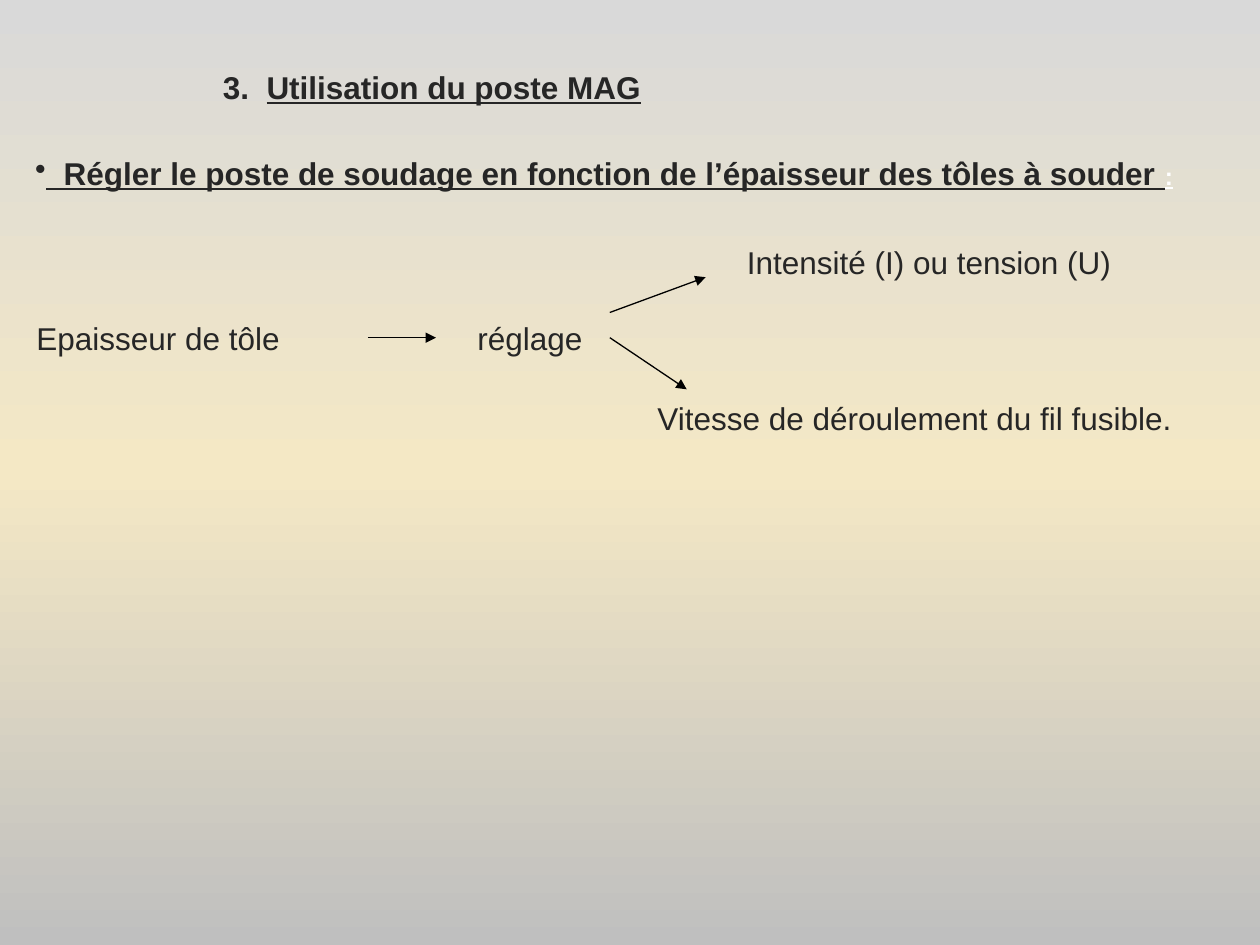
"""Build the slide on setting a MAG welder for the sheet thickness."""
from copy import deepcopy
from dataclasses import dataclass

from lxml.etree import SubElement
from pptx import Presentation
from pptx.dml.color import RGBColor as RGB
from pptx.enum.shapes import MSO_CONNECTOR as Conn
from pptx.enum.text import MSO_ANCHOR as Anchor, MSO_AUTO_SIZE as AutoSize
from pptx.oxml.ns import qn
from pptx.util import Inches, Pt


@dataclass(frozen=True)
class Theme:
    font: str = "Arial"
    ink: str = "262626"
    light: str = "FFFFFF"
    arrow: str = "000000"
    background: tuple = ((0, "D9D9D9"), (0.5, "F4E8C5"), (1, "BFBFBF"))
    body: int = 18
    small: int = 14
    line: float = 0.75
    row: float = 0.4


@dataclass(frozen=True)
class Run:
    text: str
    bold: bool = False
    underline: bool = False
    size: int = Theme.body
    color: str = Theme.ink


@dataclass(frozen=True)
class Label:
    left: float
    top: float
    width: float
    runs: tuple
    bullet: str = ""
    wrap: bool = True


@dataclass(frozen=True)
class Arrow:
    x1: float
    y1: float
    x2: float
    y2: float


THEME = Theme()

ARROWS = (
    Arrow(2.92, 2.68, 3.46, 2.68),
    Arrow(4.84, 2.48, 5.6, 2.2),
    Arrow(4.84, 2.68, 5.45, 3.09),
)

LABELS = (
    Label(0.18, 1.17, 9.32, (
        Run("  Régler le poste de soudage en fonction de l’épaisseur des tôles à souder ",
            bold=True, underline=True),
        Run(":", bold=True, underline=True, size=THEME.small, color=THEME.light),
    ), bullet="•", wrap=False),
    Label(5.83, 1.88, 3.18, (Run("Intensité (I) ou tension (U)"),)),
    Label(0.19, 2.48, 2.5, (Run("Epaisseur de tôle"),)),
    Label(3.69, 2.48, 1.23, (Run("réglage"),)),
    Label(5.12, 3.12, 4.6, (Run("Vitesse de déroulement du fil fusible."),)),
    Label(1.67, 0.49, 4.46, (
        Run("3.  ", bold=True),
        Run("Utilisation du poste MAG", bold=True, underline=True),
    )),
)


def paint_background(s) -> None:
    """Fill the slide with the vertical three-stop gradient."""
    fill = s.background.fill
    fill.gradient()
    fill.gradient_angle = 270
    stops = s.element.find(".//" + qn("a:gsLst"))
    stops.insert(1, deepcopy(stops[0]))
    for stop, (position, color) in zip(fill.gradient_stops, THEME.background):
        stop.position = position
        stop.color.rgb = RGB.from_string(color)


def add_run(p, text: str, *, bold: bool, underline: bool, size: int, color: str) -> None:
    """Append formatted text to a paragraph."""
    r = p.add_run()
    r.text = text
    r.font.name = THEME.font
    r.font.size = Pt(size)
    r.font.bold = bold
    r.font.underline = underline
    r.font.color.rgb = RGB.from_string(color)


def add_label(s, label: Label) -> None:
    """Place one line of text."""
    sp = s.shapes.add_textbox(Inches(label.left), Inches(label.top),
                              Inches(label.width), Inches(THEME.row))
    tf = sp.text_frame
    tf.word_wrap = label.wrap
    tf.auto_size = AutoSize.SHAPE_TO_FIT_TEXT
    tf.vertical_anchor = Anchor.MIDDLE
    p = tf.paragraphs[0]
    if label.bullet:
        SubElement(p._p.get_or_add_pPr(), qn("a:buChar"), char=label.bullet)
    for run in label.runs:
        add_run(p, run.text, bold=run.bold, underline=run.underline,
                size=run.size, color=run.color)


def add_arrow(s, arrow: Arrow) -> None:
    """Draw a straight line ending in a triangle."""
    ends = (Inches(v) for v in (arrow.x1, arrow.y1, arrow.x2, arrow.y2))
    sp = s.shapes.add_connector(Conn.STRAIGHT, *ends)
    sp.line.color.rgb = RGB.from_string(THEME.arrow)
    sp.line.width = Pt(THEME.line)
    SubElement(sp.line._get_or_add_ln(), qn("a:tailEnd"), type="triangle")
    SubElement(sp._element.spPr, qn("a:effectLst"))


def main() -> None:
    """Assemble and save the presentation."""
    prs = Presentation()
    prs.slide_width, prs.slide_height = Inches(10), Inches(7.5)
    s = prs.slides.add_slide(prs.slide_layouts[6])
    paint_background(s)
    for arrow in ARROWS:
        add_arrow(s, arrow)
    for label in LABELS:
        add_label(s, label)
    prs.save("out.pptx")


if __name__ == "__main__":
    main()
